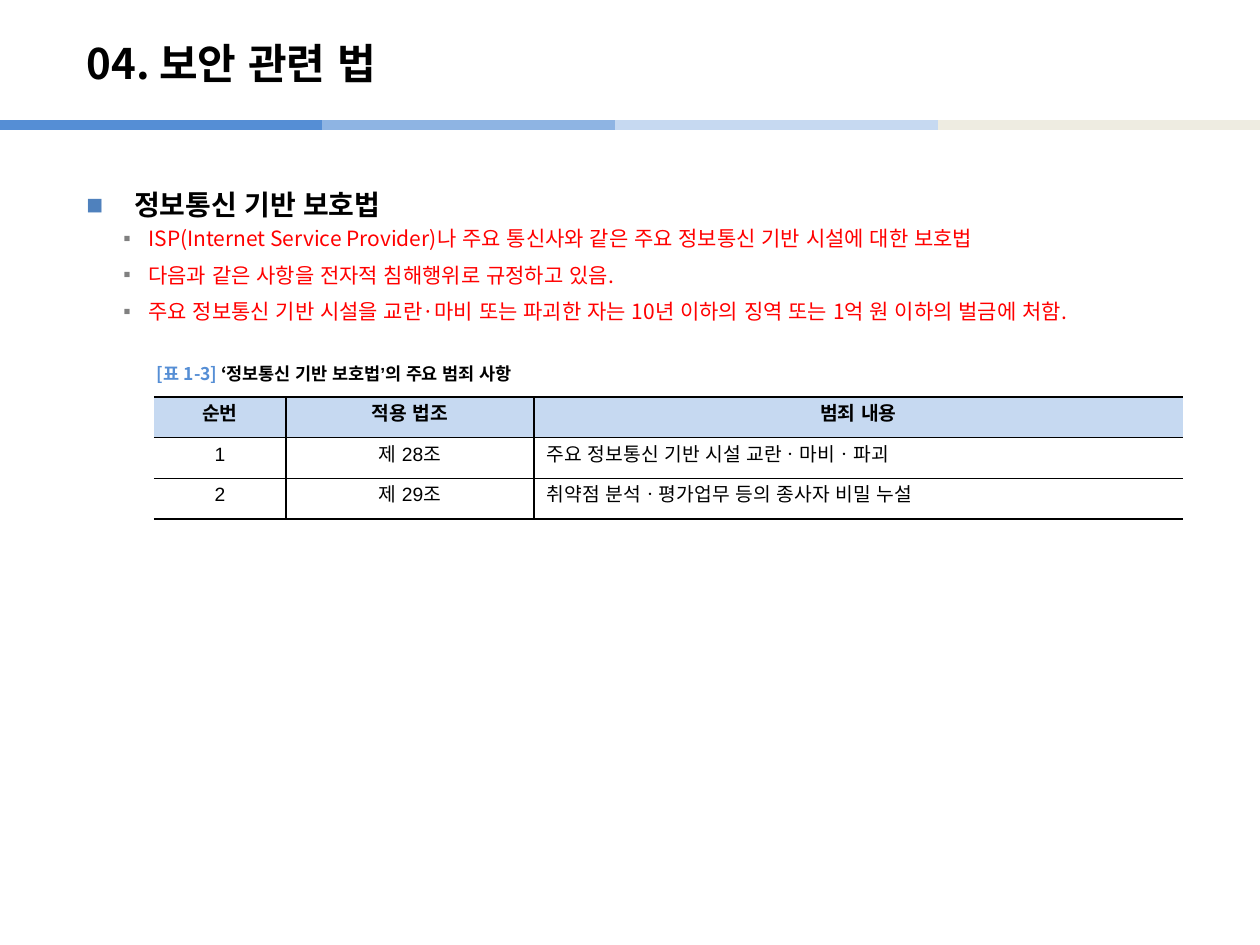
from dataclasses import dataclass

from lxml.etree import SubElement
from pptx import Presentation
from pptx.dml.color import RGBColor
from pptx.enum.shapes import MSO_CONNECTOR
from pptx.enum.text import MSO_ANCHOR as Anchor, PP_ALIGN as Align
from pptx.oxml import parse_xml
from pptx.oxml.ns import nsdecls, qn
from pptx.util import Emu, Pt

SCALE = 914400 / 126


@dataclass(frozen=True)
class Theme:
    black: str = "000000"
    white: str = "FFFFFF"
    red: str = "FF0000"
    accent: str = "558ED5"
    medium: str = "8EB4E3"
    pale: str = "C6D9F1"
    sand: str = "EEECE1"
    square: str = "4F81BD"
    gray: str = "808080"
    sans: str = "Noto Sans CJK KR"
    latin: str = "Arial"
    title_size: int = 24
    heading_size: int = 16
    point_size: int = 12
    table_size: int = 11
    caption_size: int = 10


THEME = Theme()


def px(length):
    return Emu(round(length * SCALE))


def place(*box):
    return [px(length) for length in box]


def add_run(paragraph, text, size, color=THEME.black, bold=False, latin=THEME.sans):
    run = paragraph.add_run()
    run.text = text
    for name, value in {"size": Pt(size), "bold": bold, "name": latin}.items():
        setattr(run.font, name, value)
    run.font.color.rgb = RGBColor.from_string(color)
    SubElement(run.font._element, qn("a:ea"), typeface=THEME.latin)


def set_bullet(paragraph, character, color, margin, hanging):
    properties = paragraph._p.get_or_add_pPr()
    properties.set("marL", str(px(margin)))
    properties.set("indent", str(-px(hanging)))
    bullet_color = SubElement(properties, qn("a:buClr"))
    SubElement(bullet_color, qn("a:srgbClr"), val=color)
    SubElement(properties, qn("a:buFont"), typeface=THEME.latin)
    SubElement(properties, qn("a:buChar"), char=character)


def add_color_bar(slide, left, top, width):
    """Four overlapping line segments; the last one lies on top."""
    segments = [(292, 615, THEME.medium), (615, 938, THEME.pale),
                (938, width, THEME.sand), (0, 322, THEME.accent)]
    for start, end, color in segments:
        line = slide.shapes.add_connector(
            MSO_CONNECTOR.STRAIGHT, *place(left + start, top, left + end, top))
        line.line.color.rgb = RGBColor.from_string(color)
        line.line.width = Pt(6)
        SubElement(line._element.spPr, qn("a:effectLst"))


def add_title(slide, text, *box):
    title = slide.shapes.title
    title.left, title.top, title.width, title.height = place(*box)
    title.text_frame.vertical_anchor = Anchor.MIDDLE
    paragraph = title.text_frame.paragraphs[0]
    paragraph.alignment = Align.LEFT
    add_run(paragraph, text, THEME.title_size, bold=True)


def add_outline(slide, heading, points, *box):
    frame = slide.shapes.add_textbox(*place(*box)).text_frame
    frame.word_wrap = True
    paragraph = frame.paragraphs[0]
    paragraph.line_spacing = 1.5
    set_bullet(paragraph, "■", THEME.square, margin=48, hanging=48)
    add_run(paragraph, heading, THEME.heading_size, bold=True, latin=THEME.latin)
    for point in points:
        paragraph = frame.add_paragraph()
        paragraph.level = 1
        paragraph.space_before = Pt(2.4)
        paragraph.space_after = Pt(4)
        set_bullet(paragraph, "▪", THEME.gray, margin=62, hanging=25)
        add_run(paragraph, point, THEME.point_size, THEME.red)


def add_caption(slide, label, text, *box):
    frame = slide.shapes.add_textbox(*place(*box)).text_frame
    frame.word_wrap = False
    frame.vertical_anchor = Anchor.MIDDLE
    paragraph = frame.paragraphs[0]
    add_run(paragraph, label, THEME.caption_size, THEME.accent, bold=True)
    add_run(paragraph, text, THEME.caption_size, bold=True)


def set_borders(cell, visible):
    """Draw the sides named in visible, such as "LTB", and clear the others."""
    properties = cell._tc.get_or_add_tcPr()
    for index, side in enumerate("LRTB"):
        fill = (f'<a:solidFill><a:srgbClr val="{THEME.black}"/></a:solidFill>'
                if side in visible else "<a:noFill/>")
        border = parse_xml(f'<a:ln{side} {nsdecls("a")} w="{Pt(1)}">{fill}</a:ln{side}>')
        properties.insert(index, border)


def add_law_table(slide, rows, column_widths, left, top, height):
    table = slide.shapes.add_table(
        len(rows), len(column_widths),
        *place(left, top, sum(column_widths), height)).table
    table.first_row = table.horz_banding = False
    for column, width in zip(table.columns, column_widths):
        column.width = px(width)
    last = len(column_widths) - 1
    for row_index, row in enumerate(rows):
        header = row_index == 0
        for column_index, text in enumerate(row):
            cell = table.cell(row_index, column_index)
            cell.fill.solid()
            cell.fill.fore_color.rgb = RGBColor.from_string(
                THEME.pale if header else THEME.white)
            set_borders(cell, "TB" + "L" * (column_index > 0) + "R" * (column_index < last))
            paragraph = cell.text_frame.paragraphs[0]
            description = column_index == last and not header
            paragraph.alignment = Align.LEFT if description else Align.CENTER
            add_run(paragraph, text, THEME.table_size, bold=header,
                    latin=THEME.sans if description else THEME.latin)


def main():
    presentation = Presentation()
    presentation.slide_width, presentation.slide_height = place(1260, 945)
    slide = presentation.slides.add_slide(presentation.slide_layouts[5])
    add_color_bar(slide, 0, 125, 1260)
    add_title(slide, "04. 보안 관련 법", 74, 25, 1042, 76)
    add_outline(slide, "정보통신 기반 보호법", [
        "ISP(Internet Service Provider)나 주요 통신사와 같은 주요 정보통신 기반 시설에 대한 보호법",
        "다음과 같은 사항을 전자적 침해행위로 규정하고 있음.",
        "주요 정보통신 기반 시설을 교란·마비 또는 파괴한 자는 10년 이하의 징역 또는 1억 원 이하의 벌금에 처함.",
    ], 74, 165, 1131, 745)
    add_law_table(slide, [
        ("순번", "적용 법조", "범죄 내용"),
        ("1", "제 28조", "주요 정보통신 기반 시설 교란ㆍ마비ㆍ파괴"),
        ("2", "제 29조", "취약점 분석ㆍ평가업무 등의 종사자 비밀 누설"),
    ], (132, 248, 649), 154, 397, 122)
    add_caption(slide, "[표 1-3] ", "‘정보통신 기반 보호법’의 주요 범죄 사항", 144, 354, 400, 39)
    presentation.save("out.pptx")


if __name__ == "__main__":
    main()
